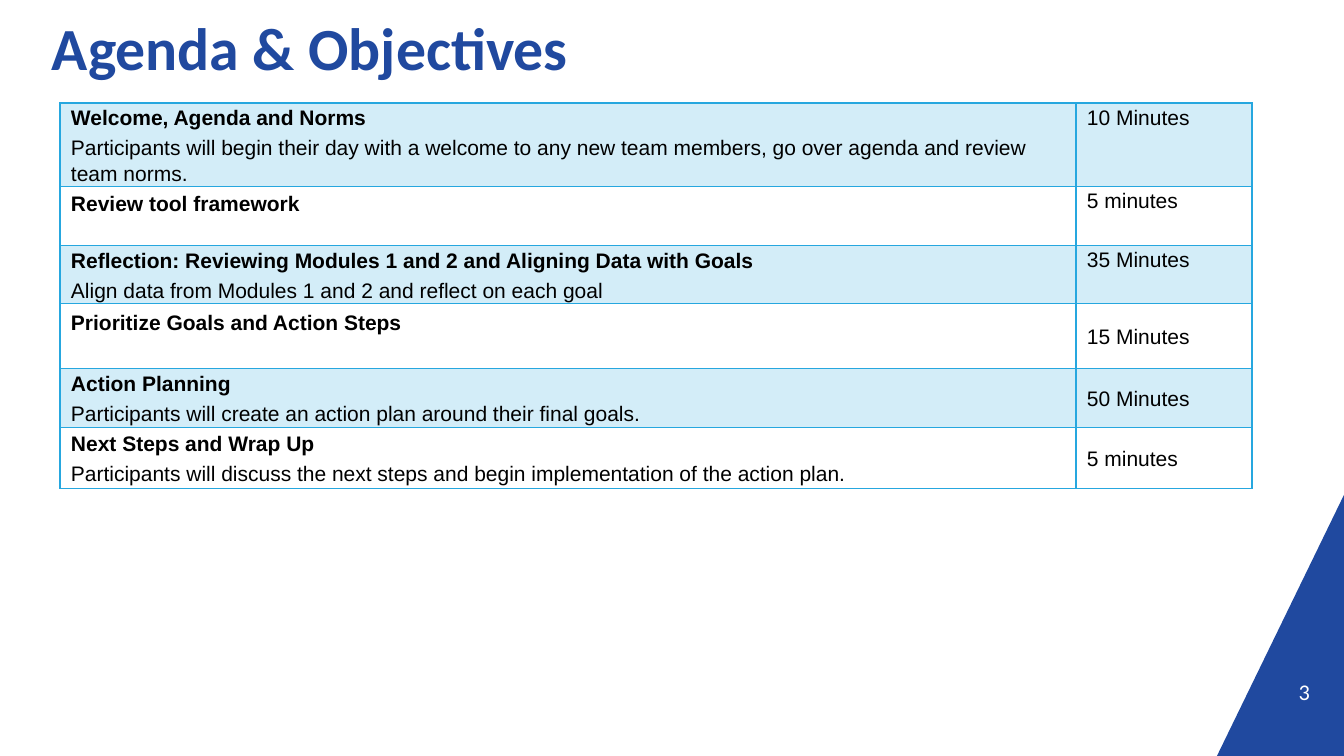
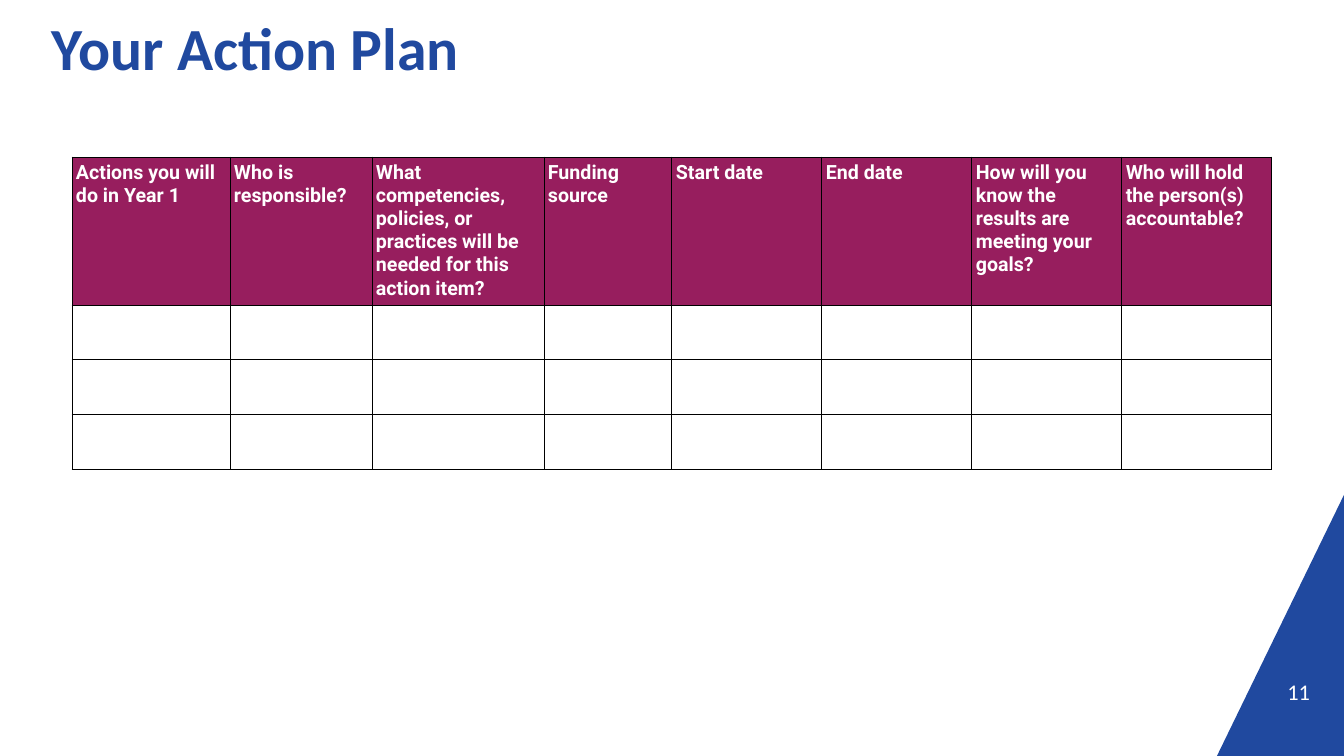
from lxml.etree import SubElement
from pptx import Presentation
from pptx.dml.color import RGBColor
from pptx.enum.text import MSO_ANCHOR as Anchor, MSO_AUTO_SIZE as AutoSize, PP_ALIGN as Align
from pptx.oxml import parse_xml
from pptx.oxml.ns import nsdecls, qn
from pptx.util import Pt

SCALE = 9144000 / 1008  # EMU in one px, at 100.8 px to the inch
WIDTH, HEIGHT = 1344, 756

# Colours
NAVY, SKY, PLUM = "20499F", "26A7DF", "971E5E"
BLACK, WHITE = "000000", "FFFFFF"


def px(length):
    return round(length * SCALE)


def rgb(code):
    return RGBColor.from_string(code)


class Style:
    """Holds the look of the deck and the slide being drawn."""

    heading_font = "Calibri"

    def __init__(self, deck):
        self.deck = deck
        self.page = None

    def new_page(self, title, number):
        self.page = self.deck.slides.add_slide(self.deck.slide_layouts[5])
        self.corner()
        self.title(title)
        self.page_number(number)

    def corner(self):
        builder = self.page.shapes.build_freeform(WIDTH, 495, scale=SCALE)
        builder.add_line_segments([(1217, HEIGHT), (WIDTH, HEIGHT)], close=True)
        corner = builder.convert_to_shape()
        corner.shadow.inherit = False
        corner.fill.solid()
        corner.fill.fore_color.rgb = rgb(NAVY)
        corner.line.fill.background()

    def place(self, box, left, top, width, height, anchor):
        box.left, box.top, box.width, box.height = map(px, (left, top, width, height))
        frame = box.text_frame
        frame.word_wrap = True
        frame.auto_size = AutoSize.NONE
        frame.vertical_anchor = anchor
        frame.margin_left = frame.margin_top = frame.margin_right = frame.margin_bottom = 0
        return frame.paragraphs[0]

    def span(self, para, text, size, font, color, bold=False):
        span = para.add_run()
        span.text = text
        span.font.size = Pt(size)
        span.font.name = font
        span.font.bold = bold
        span.font.color.rgb = rgb(color)

    def title(self, text):
        para = self.place(self.page.shapes.title, 52, 24, 1208, 54, Anchor.MIDDLE)
        para.alignment = Align.LEFT
        para.line_spacing = 0.9
        self.span(para, text, 42.7, self.heading_font, NAVY, bold=True)

    def page_number(self, number):
        box = self.page.shapes.add_textbox(0, 0, 0, 0)
        para = self.place(box, 1210, 675, 100, 30, Anchor.BOTTOM)
        para.alignment = Align.RIGHT
        self.span(para, str(number), 16, self.heading_font, WHITE)

    def table(self, left, top, columns, rows, border, weight):
        frame = self.page.shapes.add_table(
            len(rows), len(columns), px(left), px(top), px(sum(columns)), px(sum(rows)))
        table = frame.table
        table.first_row = table.horz_banding = False
        for column, width in zip(table.columns, columns):
            column.width = px(width)
        for row, height in zip(table.rows, rows):
            row.height = px(height)
        for cell in table.iter_cells():
            cell.fill.background()
            self.borders(cell, border, weight)
        return table

    def borders(self, cell, color, weight):
        properties = cell._tc.get_or_add_tcPr()
        for index, side in enumerate(("lnL", "lnR", "lnT", "lnB")):
            properties.insert(index, parse_xml(
                f'<a:{side} {nsdecls("a")} w="{Pt(weight)}"><a:solidFill>'
                f'<a:srgbClr val="{color}"/></a:solidFill></a:{side}>'))

    def fill(self, cell, color, percent=100):
        cell.fill.solid()
        cell.fill.fore_color.rgb = rgb(color)
        if percent < 100:
            code = cell._tc.tcPr.find(qn("a:solidFill")).find(qn("a:srgbClr"))
            SubElement(code, qn("a:alpha")).set("val", str(percent * 1000))

    def margins(self, cell, side, top, bottom):
        cell.margin_left = cell.margin_right = px(side)
        cell.margin_top, cell.margin_bottom = px(top), px(bottom)


def agenda(style):
    style.new_page("Agenda & Objectives", 3)
    # Heading, detail, time, anchor of the time, top inset of a lone heading
    items = [
        ("Welcome, Agenda and Norms",
         "Participants will begin their day with a welcome to any new team members, "
         "go over agenda and review team norms.", "10 Minutes", Anchor.TOP, 0),
        ("Review tool framework", None, "5 minutes", Anchor.TOP, 3),
        ("Reflection: Reviewing Modules 1 and 2 and Aligning Data with Goals",
         "Align data from Modules 1 and 2 and reflect on each goal",
         "35 Minutes", Anchor.TOP, 0),
        ("Prioritize Goals and Action Steps", None, "15 Minutes", Anchor.MIDDLE, 5),
        ("Action Planning",
         "Participants will create an action plan around their final goals.",
         "50 Minutes", Anchor.MIDDLE, 0),
        ("Next Steps and Wrap Up",
         "Participants will discuss the next steps and begin implementation of the action plan.",
         "5 minutes", Anchor.MIDDLE, 0),
    ]
    table = style.table(60, 103, [1016, 176], [83, 59, 58, 65, 59, 61], SKY, 1)
    for row, (heading, detail, time, anchor, inset) in enumerate(items):
        topic, duration = table.cell(row, 0), table.cell(row, 1)
        style.margins(topic, 11, inset, 0)
        style.margins(duration, 11, 0, 0)
        topic.vertical_anchor = Anchor.MIDDLE if detail else Anchor.TOP
        duration.vertical_anchor = anchor
        if row % 2 == 0:
            style.fill(topic, SKY, 20)
            style.fill(duration, SKY, 20)
        lines = [(topic.text_frame.paragraphs[0], heading, True),
                 (duration.text_frame.paragraphs[0], time, False)]
        if detail:
            para = topic.text_frame.add_paragraph()
            para.space_before = Pt(2)
            lines.append((para, detail, False))
        for para, text, bold in lines:
            para.line_spacing = 1.15
            style.span(para, text, 15, "Arial", BLACK, bold)


def action_plan(style):
    style.new_page("Your Action Plan", 11)
    headings = [
        "Actions you will do in Year 1",
        "Who is responsible?",
        "What competencies, policies, or practices will be needed for this action item?",
        "Funding source",
        "Start date",
        "End date",
        "How will you know the results are meeting your goals?",
        "Who will hold the person(s) accountable?",
    ]
    columns = [158, 142, 172, 128] + [150] * 4
    table = style.table(72, 157, columns, [148] + [55] * 3, BLACK, 0.75)
    for column, heading in enumerate(headings):
        cell = table.cell(0, column)
        style.margins(cell, 4, 4, 4)
        style.fill(cell, PLUM)
        style.span(cell.text_frame.paragraphs[0], heading, 14, "Roboto", WHITE, bold=True)


def main():
    deck = Presentation()
    deck.slide_width, deck.slide_height = px(WIDTH), px(HEIGHT)
    style = Style(deck)
    agenda(style)
    action_plan(style)
    deck.save("out.pptx")


if __name__ == "__main__":
    main()
